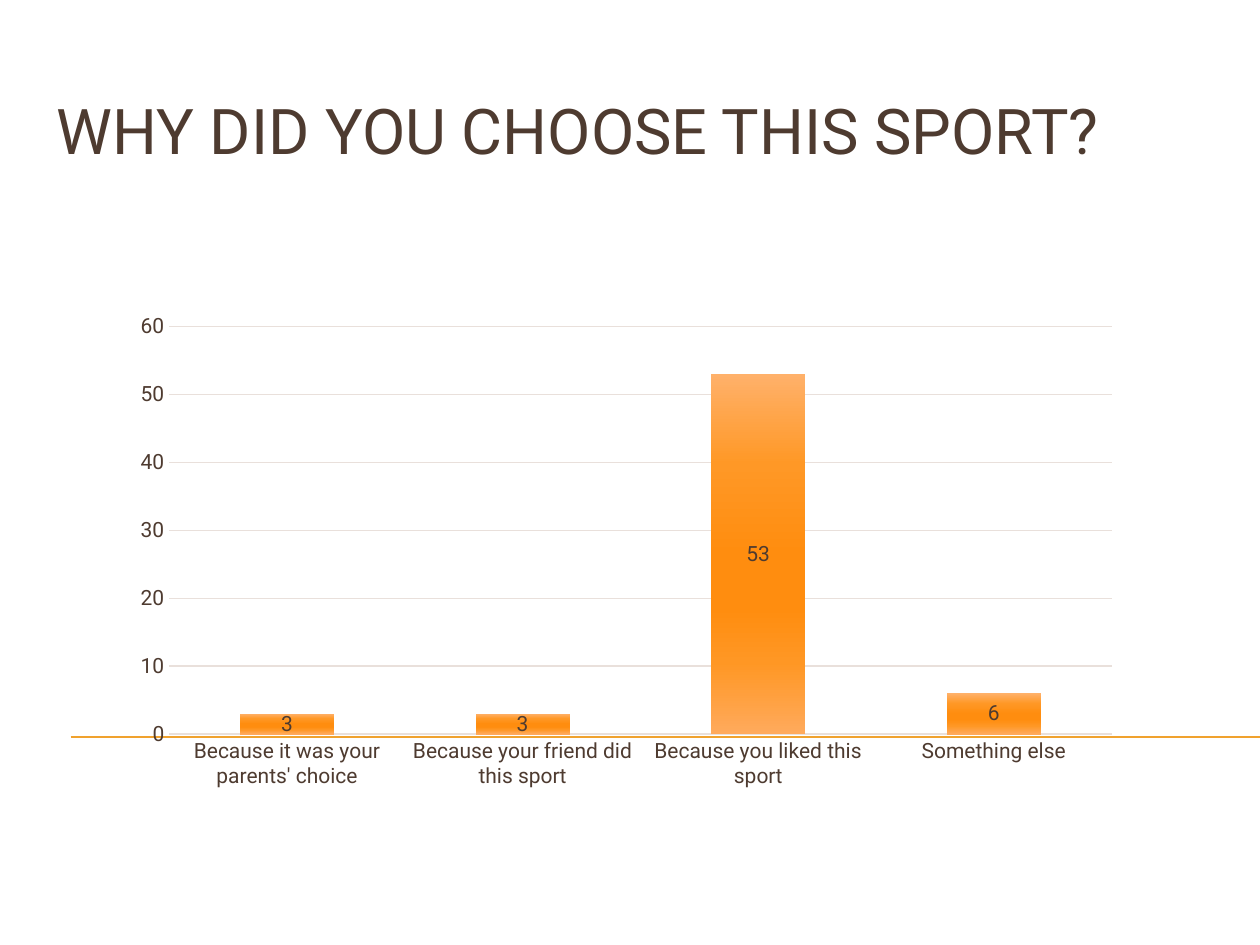
from lxml import etree
from pptx import Presentation
from pptx.chart.data import CategoryChartData
from pptx.dml.color import RGBColor
from pptx.enum.chart import XL_CHART_TYPE, XL_LABEL_POSITION, XL_TICK_MARK
from pptx.enum.shapes import MSO_CONNECTOR
from pptx.oxml import parse_xml
from pptx.oxml.ns import nsdecls, qn
from pptx.util import Inches, Pt

STACKED = XL_CHART_TYPE.COLUMN_STACKED
CENTER = XL_LABEL_POSITION.CENTER
NO_TICK = XL_TICK_MARK.NONE
STRAIGHT = MSO_CONNECTOR.STRAIGHT

FONT = "Roboto"
COLORS = {"text": "4E3B30", "rule": "F0A22E", "grid": "E9E0DB"}
# Bar gradient, top to bottom: percent and colour
STOPS = [(0, "FFB16A"), (25, "FF9826"), (50, "FF8D0F"),
         (65, "FF8D0F"), (80, "FF9724"), (100, "FFAA5C")]
PLOT = {"x": 0.136, "y": 0.07, "w": 0.757, "h": 0.663}
ANSWERS = {
    "Because it was your parents' choice": 3,
    "Because your friend did this sport": 3,
    "Because you liked this sport": 53,
    "Something else": 6,
}


def set_font(font, size):
    font.name = FONT
    font.size = Pt(size)
    font.bold = False
    font.color.rgb = RGBColor.from_string(COLORS["text"])


def set_line(line, color):
    line.color.rgb = RGBColor.from_string(COLORS[color])
    line.width = Pt(0.75)


def add_text(slide, text, *, left, top, width, height, size):
    frame = slide.shapes.add_textbox(
        Inches(left), Inches(top), Inches(width), Inches(height)).text_frame
    frame.word_wrap = True
    run = frame.paragraphs[0].add_run()
    run.text = text
    set_font(run.font, size)


def add_rule(slide, left, right, top):
    rule = slide.shapes.add_connector(
        STRAIGHT, Inches(left), Inches(top), Inches(right), Inches(top))
    set_line(rule.line, "rule")
    etree.SubElement(rule._element.spPr, qn("a:effectLst"))


def fill_bars(series):
    stops = "".join(
        f'<a:gs pos="{pos * 1000}"><a:srgbClr val="{color}"/></a:gs>'
        for pos, color in STOPS)
    series.format.fill.gradient()
    old = series._element.spPr.find(qn("a:gradFill"))
    new = parse_xml(
        f'<a:gradFill {nsdecls("a")} rotWithShape="1"><a:gsLst>{stops}</a:gsLst>'
        '<a:lin ang="5400000" scaled="0"/></a:gradFill>')
    old.getparent().replace(old, new)


def place_plot(chart):
    modes = "".join(f'<c:{key}Mode val="edge"/>' for key in "xy")
    sizes = "".join(f'<c:{key} val="{val}"/>' for key, val in PLOT.items())
    area = chart._chartSpace.chart.plotArea
    for old in area.findall(qn("c:layout")):
        area.remove(old)
    area.insert(0, parse_xml(
        f'<c:layout {nsdecls("c")}><c:manualLayout>'
        f'<c:layoutTarget val="inner"/>{modes}{sizes}'
        '</c:manualLayout></c:layout>'))


def add_bars(slide, left, top, width, height):
    data = CategoryChartData()
    data.categories = ANSWERS.keys()
    data.add_series("Series 1", ANSWERS.values())
    chart = slide.shapes.add_chart(
        STACKED, Inches(left), Inches(top), Inches(width), Inches(height),
        data).chart
    chart.has_legend = False
    chart.has_title = False
    set_font(chart.font, 12)
    place_plot(chart)

    # Bars and their labels
    plot = chart.plots[0]
    plot.vary_by_categories = False
    plot.gap_width = 150
    plot.overlap = 100
    bars = plot.series[0]
    fill_bars(bars)
    labels = bars.data_labels
    labels.show_value = True
    labels.position = CENTER
    set_font(labels.font, 12)

    # Axes
    for axis in (chart.category_axis, chart.value_axis):
        axis.major_tick_mark = axis.minor_tick_mark = NO_TICK
        set_font(axis.tick_labels.font, 12)
    set_line(chart.category_axis.format.line, "grid")
    scale = chart.value_axis
    scale.minimum_scale, scale.maximum_scale, scale.major_unit = 0, 60, 10
    scale.format.line.fill.background()
    set_line(scale.major_gridlines.format.line, "grid")


def main():
    deck = Presentation()
    deck.slide_width, deck.slide_height = Inches(10), Inches(7.5)
    slide = deck.slides.add_slide(deck.slide_layouts[6])
    add_rule(slide, 0.56, 10, 5.85)
    add_text(slide, "WHY DID YOU CHOOSE THIS SPORT?",
             left=0.35, top=0.68, width=8.9, height=1.47, size=36)
    add_bars(slide, 0, 2.25, 9.88, 4.88)
    deck.save("out.pptx")


if __name__ == "__main__":
    main()
